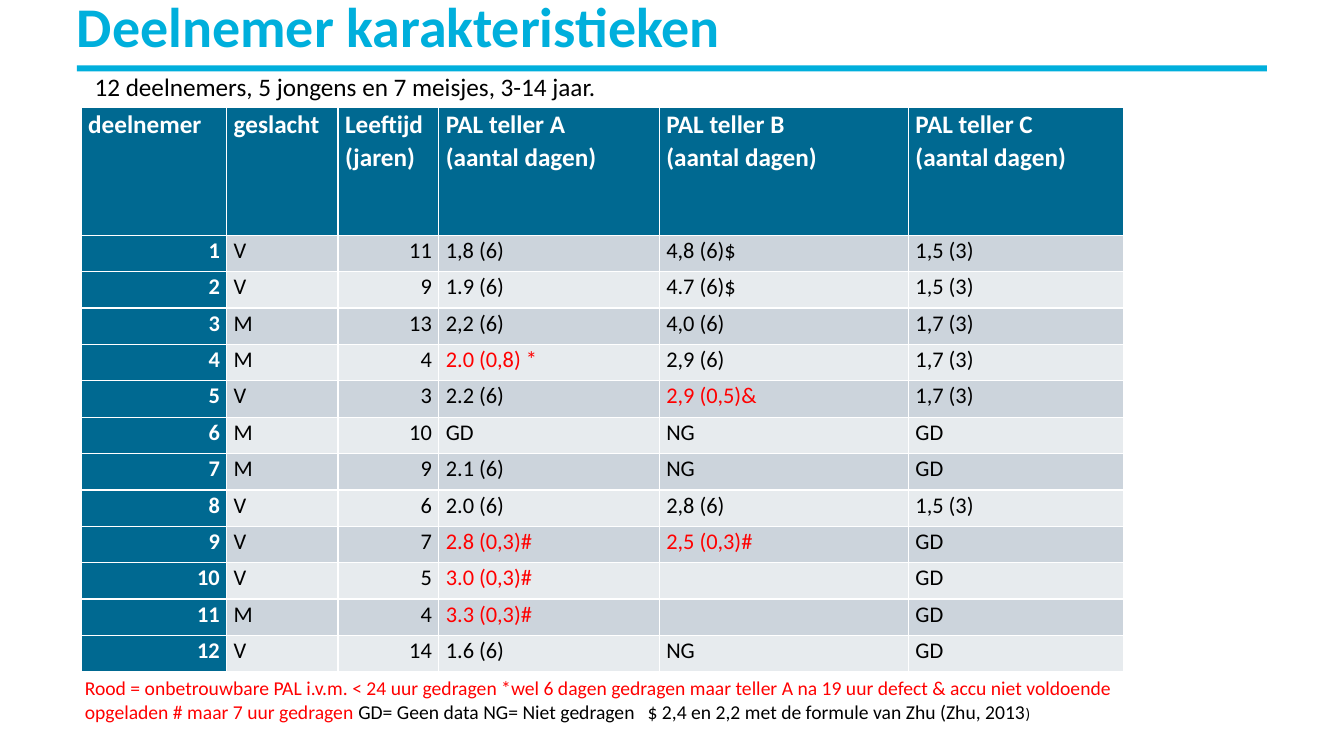
from lxml.etree import SubElement
from pptx import Presentation
from pptx.dml.color import RGBColor
from pptx.enum.shapes import MSO_SHAPE
from pptx.enum.text import MSO_ANCHOR, MSO_AUTO_SIZE, PP_ALIGN
from pptx.oxml.ns import qn
from pptx.util import Pt

COLORS = {
    "accent": "00AFDC",
    "header": "006991",
    "odd": "CCD4DC",
    "even": "E7EBEE",
    "white": "FFFFFF",
    "black": "000000",
    "red": "FF0000",
}
COLUMN_WIDTHS = [104, 79.5, 72, 157.5, 178, 153.5]
HEADER_HEIGHT = 91.5
ROW_HEIGHT = 26
RIGHT_ALIGNED = (0, 2)
HEADER = ["deelnemer", "geslacht", "Leeftijd (jaren)", "PAL teller A\v(aantal dagen)",
          "PAL teller B\v(aantal dagen)", "PAL teller C\v(aantal dagen)"]
PARTICIPANTS = [
    ["V", "11", "1,8 (6)", "4,8 (6)$", "1,5 (3)"],
    ["V", "9", "1.9 (6)", "4.7 (6)$", "1,5 (3)"],
    ["M", "13", "2,2 (6)", "4,0 (6)", "1,7 (3)"],
    ["M", "4", "2.0 (0,8) *", "2,9 (6)", "1,7 (3)"],
    ["V", "3", "2.2 (6)", "2,9 (0,5)&", "1,7 (3)"],
    ["M", "10", "GD", "NG", "GD"],
    ["M", "9", "2.1 (6)", "NG", "GD"],
    ["V", "6", "2.0 (6)", "2,8 (6)", "1,5 (3)"],
    ["V", "7", "2.8 (0,3)#", "2,5 (0,3)#", "GD"],
    ["V", "5", "3.0 (0,3)#", "", "GD"],
    ["M", "4", "3.3 (0,3)#", "", "GD"],
    ["V", "14", "1.6 (6)", "NG", "GD"],
]
LEGEND = [
    ("Rood = onbetrouwbare PAL i.v.m. < 24 uur gedragen *wel 6 dagen gedragen maar "
     "teller A na 19 uur defect & accu niet voldoende opgeladen # maar 7 uur gedragen ",
     14, "red"),
    ("GD= Geen data NG= Niet gedragen\t$ 2,4 en 2,2 met de formule van Zhu (Zhu, 2013",
     14, "black"),
    (")", 11, "black"),
]


class SlideBuilder:
    def __init__(self, page, font="Calibri"):
        self.page = page
        self.font = font

    def color(self, name):
        return RGBColor.from_string(COLORS[name])

    def format_span(self, span, size, color, bold=False):
        span.font.name = self.font
        span.font.size = Pt(size)
        span.font.bold = bold
        span.font.color.rgb = self.color(color)

    def title(self, text, left, top, width, height):
        box = self.page.shapes.title
        box.left, box.top, box.width, box.height = map(Pt, (left, top, width, height))
        frame = box.text_frame
        frame.text = text
        frame.auto_size = MSO_AUTO_SIZE.NONE
        frame.vertical_anchor = MSO_ANCHOR.MIDDLE
        frame.margin_left = frame.margin_right = frame.margin_top = frame.margin_bottom = 0
        para = frame.paragraphs[0]
        para.alignment = PP_ALIGN.LEFT
        para.line_spacing = Pt(42)
        self.format_span(para.runs[0], 40, "accent", bold=True)

    def bar(self, color, left, top, width, height):
        bar = self.page.shapes.add_shape(
            MSO_SHAPE.RECTANGLE, Pt(left), Pt(top), Pt(width), Pt(height))
        bar.shadow.inherit = False
        bar.fill.solid()
        bar.fill.fore_color.rgb = self.color(color)
        bar.line.fill.background()

    def text(self, spans, left, top, width, height, tab_stop=None):
        """Add one paragraph made of (text, size, color) spans."""
        box = self.page.shapes.add_textbox(Pt(left), Pt(top), Pt(width), Pt(height))
        frame = box.text_frame
        frame.word_wrap = True
        frame.auto_size = MSO_AUTO_SIZE.SHAPE_TO_FIT_TEXT
        para = frame.paragraphs[0]
        if tab_stop:
            tabs = SubElement(para._p.get_or_add_pPr(), qn("a:tabLst"))
            SubElement(tabs, qn("a:tab"), pos=str(Pt(tab_stop)), algn="l")
        for text, size, color in spans:
            span = para.add_run()
            span.text = text
            self.format_span(span, size, color)

    def cell(self, cell, text, size, color, fill, bold, alignment):
        cell.fill.solid()
        cell.fill.fore_color.rgb = self.color(fill)
        cell.margin_left = cell.margin_right = Pt(5)
        cell.margin_top = cell.margin_bottom = 0
        cell.text_frame.text = text
        para = cell.text_frame.paragraphs[0]
        para.alignment = alignment
        para.line_spacing = 1.07
        para.space_after = Pt(8)
        for span in para.runs:
            self.format_span(span, size, color, bold)

    def participant_table(self, left, top):
        height = HEADER_HEIGHT + ROW_HEIGHT * len(PARTICIPANTS)
        table = self.page.shapes.add_table(
            len(PARTICIPANTS) + 1, len(HEADER),
            Pt(left), Pt(top), Pt(sum(COLUMN_WIDTHS)), Pt(height)).table
        table.first_col = True
        for column, width in zip(table.columns, COLUMN_WIDTHS):
            column.width = Pt(width)
        numbered = [[str(n), *values] for n, values in enumerate(PARTICIPANTS, 1)]
        for r, values in enumerate([HEADER] + numbered):
            table.rows[r].height = Pt(ROW_HEIGHT if r else HEADER_HEIGHT)
            for c, value in enumerate(values):
                heading = r == 0 or c == 0
                # Values based on less than one day of wearing are red.
                color = "white" if heading else "red" if "(0," in value else "black"
                fill = "header" if heading else "odd" if r % 2 else "even"
                right = r > 0 and c in RIGHT_ALIGNED
                self.cell(table.cell(r, c), value, 16 if r else 18, color, fill, heading,
                          PP_ALIGN.RIGHT if right else PP_ALIGN.LEFT)


def main():
    deck = Presentation()
    deck.slide_width, deck.slide_height = Pt(960), Pt(540)
    builder = SlideBuilder(deck.slides.add_slide(deck.slide_layouts[5]))
    builder.bar("accent", 55, 46.8, 850, 4.2)
    builder.title("Deelnemer karakteristieken", 55, 0, 850, 42)
    builder.text([("12 deelnemers, 5 jongens en 7 meisjes, 3-14 jaar.", 18, "black")],
                 60.5, 47.5, 856, 29)
    builder.participant_table(58, 76.5)
    builder.text(LEGEND, 53.5, 479.5, 754, 41, tab_stop=402)
    deck.save("out.pptx")


if __name__ == "__main__":
    main()
